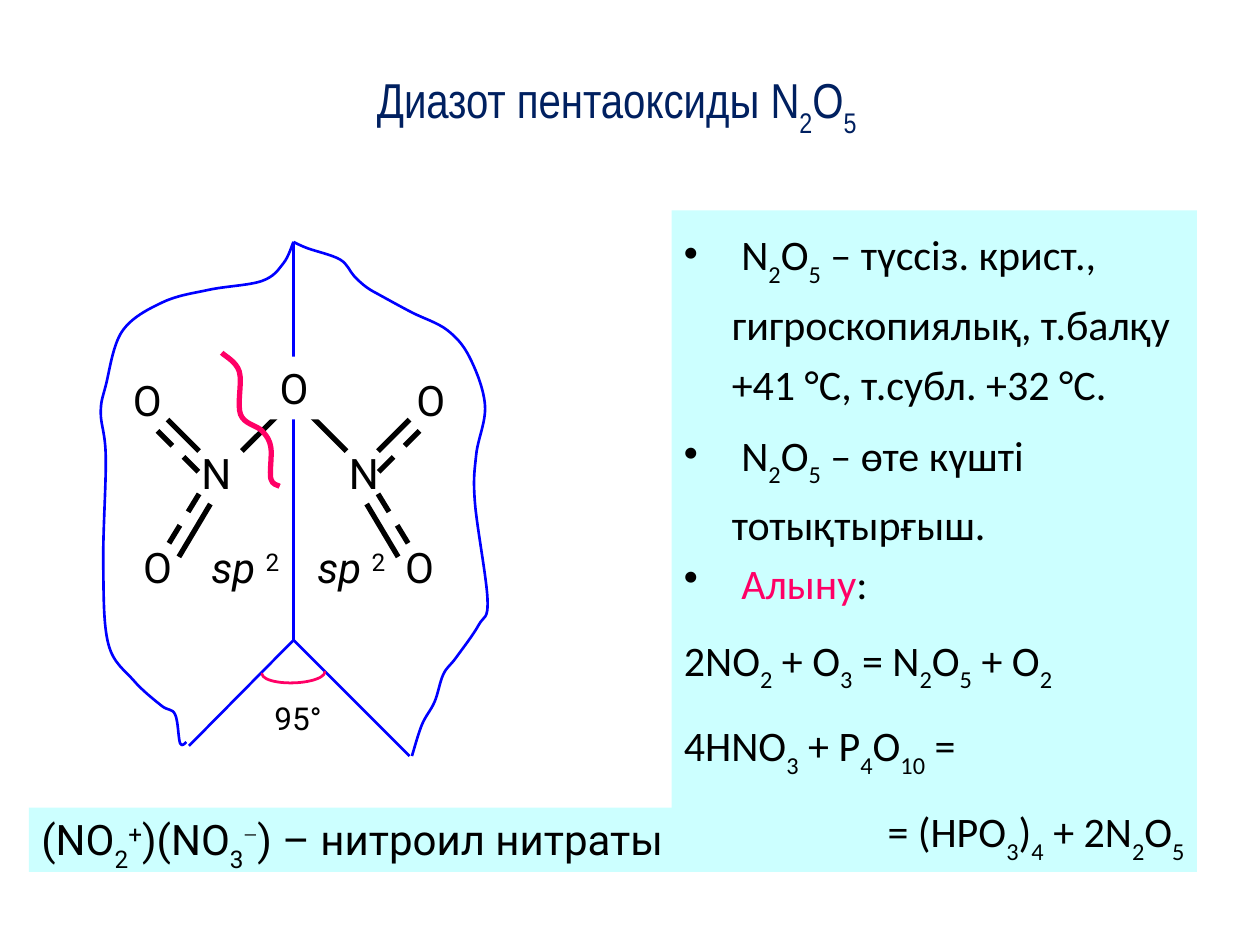
"""Build the slide on dinitrogen pentoxide: its structure, properties and preparation."""
from dataclasses import dataclass

from lxml.etree import SubElement
from pptx import Presentation
from pptx.dml.color import RGBColor
from pptx.enum.dml import MSO_LINE
from pptx.enum.shapes import MSO_CONNECTOR, MSO_SHAPE
from pptx.enum.text import MSO_ANCHOR, PP_ALIGN
from pptx.oxml.ns import qn
from pptx.util import Inches, Pt


@dataclass(frozen=True)
class Theme:
    navy: str = "002060"
    black: str = "000000"
    white: str = "FFFFFF"
    pale: str = "CCFFFF"
    pink: str = "FF0066"
    blue: str = "0000FF"
    steel: str = "4F81BD"
    title_face: str = "Arial Narrow"
    body_face: str = "Calibri"
    formula_face: str = "Roboto"
    minus_face: str = "Times New Roman"
    title_size: int = 28
    text_size: int = 24
    angle_size: int = 18
    thick: float = 3
    thin: float = 1.5


theme = Theme()


def write(paragraph, text, face=theme.formula_face, size=theme.text_size,
          color=theme.black, italic=False, align=None):
    """Add runs split at "|"; a leading _ lowers a run and ^ raises it."""
    if align is not None:
        paragraph.alignment = align
    for part in text.split("|"):
        run = paragraph.add_run()
        run.text = part.lstrip("_^")
        run.font.name = face
        run.font.size = Pt(size)
        run.font.italic = italic
        run.font.color.rgb = RGBColor.from_string(color)
        if part[0] in "_^":
            run._r.get_or_add_rPr().set("baseline", "-30000" if part[0] == "_" else "30000")


def draw_smooth_curve(anchors, color, width):
    """Join the anchors by Bezier curves whose tangents follow the neighbouring anchors."""
    padded = [anchors[0], *anchors, anchors[-1]]
    corners = []
    for before, start, end, after in zip(padded, padded[1:], padded[2:], padded[3:]):
        corners.append([s + (e - b) / 6 for b, s, e in zip(before, start, end)])
        corners.append([e - (a - s) / 6 for s, e, a in zip(start, end, after)])
        corners.append(end)
    builder = slide.shapes.build_freeform(*map(Inches, anchors[0]))
    builder.add_line_segments([tuple(map(Inches, corner)) for corner in corners], close=False)
    curve = builder.convert_to_shape()
    curve.shadow.inherit = False
    curve.fill.background()
    curve.line.color.rgb = RGBColor.from_string(color)
    curve.line.width = Pt(width)
    outline = next(curve._element.iter(qn("a:path")))
    segments = outline.findall(qn("a:lnTo"))
    for first in range(0, len(segments), 3):
        bezier = SubElement(outline, qn("a:cubicBezTo"))
        for segment in segments[first:first + 3]:
            bezier.append(segment[0])
            outline.remove(segment)


deck = Presentation()
deck.slide_width, deck.slide_height = Inches(10), Inches(7.5)
slide = deck.slides.add_slide(deck.slide_layouts[5])

title = slide.shapes.title
title.left, title.top, title.width, title.height = map(Inches, (0.67, 0.33, 8.5, 1))
title.text_frame.vertical_anchor = MSO_ANCHOR.MIDDLE
write(title.text_frame.paragraphs[0], "Диазот пентаоксиды N|_2|O|_5 ", face=theme.title_face,
      size=theme.title_size, color=theme.navy, align=PP_ALIGN.CENTER)

# Each bond of the left half is reflected: right x = mirror sum - left x.
bridge_mirror, nitro_mirror = 4.67, 4.58
left_bonds = [
    (1.92, 3.58, 2.25, 3.25, None, bridge_mirror),
    (1.33, 3.33, 1.58, 3.58, None, nitro_mirror),
    (1.25, 3.42, 1.58, 3.75, MSO_LINE.DASH, nitro_mirror),
    (1.67, 4, 1.42, 4.42, None, nitro_mirror),
    (1.58, 3.92, 1.33, 4.33, MSO_LINE.DASH, nitro_mirror),
]
strokes = []
for x1, y1, x2, y2, dash, mirror in left_bonds:
    strokes.append((x1, y1, x2, y2, theme.black, theme.thick, dash))
    strokes.append((mirror - x1, y1, mirror - x2, y2, theme.black, theme.thick, dash))

fold_x, fold_top, fold_bottom = 2.33, 1.92, 5.08
left_corner, right_corner = (1.5, 5.92), (3.25, 6)
for x, y in [(fold_x, fold_top), left_corner, right_corner]:
    strokes.append((fold_x, fold_bottom, x, y, theme.blue, theme.thin, None))

for x1, y1, x2, y2, color, width, dash in strokes:
    stroke = slide.shapes.add_connector(
        MSO_CONNECTOR.STRAIGHT, Inches(x1), Inches(y1), Inches(x2), Inches(y2))
    stroke.line.color.rgb = RGBColor.from_string(color)
    stroke.line.width = Pt(width)
    if dash:
        stroke.line.dash_style = dash
    SubElement(stroke._element.spPr, qn("a:effectLst"))

angle_arc = slide.shapes.add_shape(
    MSO_SHAPE.MOON, Inches(2.29), Inches(5.13), Inches(0.08), Inches(0.5))
angle_arc.adjustments[0] = 0.013
angle_arc.rotation = 268.2
angle_arc.shadow.inherit = False
angle_arc.fill.solid()
angle_arc.fill.fore_color.rgb = RGBColor.from_string(theme.steel)
angle_arc.line.color.rgb = RGBColor.from_string(theme.pink)
angle_arc.line.width = Pt(theme.thin)

atom = {"align": PP_ALIGN.CENTER}
hybrid = {"italic": True}
angle = {"size": theme.angle_size}
labels = [
    ("N", (1.5, 2.67), 3.5, 0.42, {}),
    ("O", (0.92, 3.17), 2.92, 0.5, atom),
    ("O", (1, 3.08), 4.25, 0.5, atom),
    ("sp ", (1.58, 2.42), 4.25, 0.83, hybrid),
    ("95°", (2.08,), 5.5, 0.67, angle),
]
for text, lefts, top, width, text_format in labels:
    for left in lefts:
        label = slide.shapes.add_textbox(*map(Inches, (left, top, width, 0.5)))
        label.text_frame.word_wrap = True
        line = label.text_frame.paragraphs[0]
        write(line, text, **text_format)
        if text_format is hybrid:
            write(line, "^2")

panels = []
for fill, *place in [(theme.pale, 5.33, 1.67, 4.17, 5.25),
                     (theme.white, 2, 2.83, 0.67, 0.5),
                     (theme.pale, 0.23, 6.41, 5.45, 0.51)]:
    panel = slide.shapes.add_shape(MSO_SHAPE.RECTANGLE, *map(Inches, place))
    panel.shadow.inherit = False
    panel.fill.solid()
    panel.fill.fore_color.rgb = RGBColor.from_string(fill)
    panel.line.fill.background()
    panel.text_frame.word_wrap = True
    panel.text_frame.vertical_anchor = MSO_ANCHOR.TOP
    panels.append(panel.text_frame)
properties, bridge_oxygen, nitrate = panels

write(bridge_oxygen.paragraphs[0], "O", **atom)
write(nitrate.paragraphs[0], "(NO|_2|^+|)(NO|_3", align=PP_ALIGN.LEFT)
write(nitrate.paragraphs[0], "^−", face=theme.minus_face)
write(nitrate.paragraphs[0], ") – нитроил нитраты")

bullet = {"spacing": 1.2, "mark": "•", "align": PP_ALIGN.LEFT}
heading = {**bullet, "spacing": 1}
equation = {"spacing": 1.3, "mark": None, "align": PP_ALIGN.LEFT}
product = {**equation, "align": PP_ALIGN.RIGHT}
facts = [
    (" N|_2|O|_5| – түссіз. крист., гигроскопиялық, т.балқу +41 °С, т.субл. +32 °С.", bullet),
    (" N|_2|O|_5| – өте күшті тотықтырғыш.", bullet),
    (" |Алыну|:", heading),
    ("2NO|_2| + O|_3| = N|_2|O|_5| + O|_2", equation),
    ("4HNO|_3| + P|_4|O|_10| =", equation),
    ("= (HPO|_3|)|_4| + 2N|_2|O|_5", product),
]
for index, (text, style) in enumerate(facts):
    fact = properties.add_paragraph() if index else properties.paragraphs[0]
    layout = fact._p.get_or_add_pPr()
    layout.set("marL", str(Inches(0.38)))
    layout.set("indent", str(-Inches(0.38)))
    if style["mark"]:
        SubElement(layout, qn("a:buChar")).set("char", style["mark"])
    fact.line_spacing = style["spacing"]
    if index:
        fact.space_before = Pt(0.2 * theme.text_size)
    write(fact, text, face=theme.body_face, align=style["align"])
    if style is heading:
        fact.runs[1].font.color.rgb = RGBColor.from_string(theme.pink)

left_edge = [
    (fold_x, fold_top), (2.25, 2.09), (2.08, 2.23), (1.66, 2.3), (1.29, 2.4), (0.97, 2.63),
    (0.84, 3.06), (0.8, 3.28), (0.84, 3.63), (0.82, 4.47), (0.86, 5.11), (1.06, 5.4),
    (1.28, 5.6), (1.39, 5.67), (1.43, 5.9), (1.48, 5.89)]
right_edge = [
    (fold_x, fold_top), (2.44, 1.97), (2.7, 2.06), (2.81, 2.19), (2.91, 2.28), (3.03, 2.35),
    (3.27, 2.48), (3.55, 2.62), (3.73, 2.84), (3.85, 3.22), (3.78, 3.61), (3.77, 3.99),
    (3.87, 4.76), (3.8, 4.96), (3.62, 5.22), (3.52, 5.35), (3.45, 5.57), (3.35, 5.75), (3.27, 6)]
bond_break = [
    (1.76, 2.8), (1.9, 2.95), (1.91, 3.29), (2.08, 3.42), (2.15, 3.55), (2.15, 3.8), (2.22, 3.86)]
for anchors, color, width in [(left_edge, theme.blue, theme.thin),
                              (right_edge, theme.blue, theme.thin),
                              (bond_break, theme.pink, theme.thick)]:
    draw_smooth_curve(anchors, color, width)

deck.save("out.pptx")
